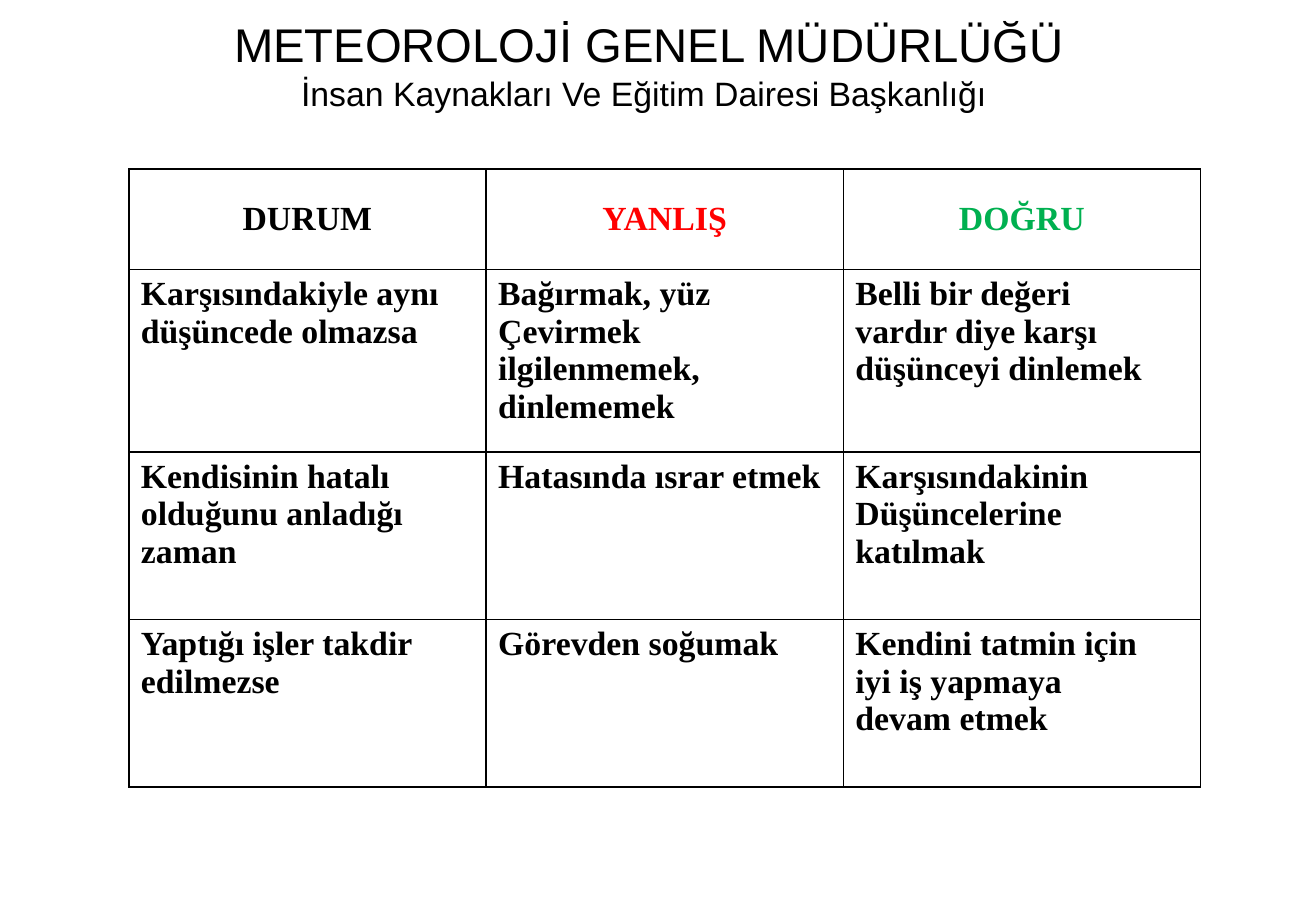
"""Builds a slide with a heading and a table of wrong and right behaviours."""
from lxml import etree
from pptx import Presentation, util as u
from pptx.dml import color
from pptx.enum import text
from pptx.oxml import ns

HEADING = [("METEOROLOJİ GENEL MÜDÜRLÜĞÜ", 28),
           ("İnsan Kaynakları Ve Eğitim Dairesi Başkanlığı ", 20)]
HEADERS = [("DURUM", "000000"), ("YANLIŞ", "FF0000"), ("DOĞRU", "00B050")]
SITUATIONS = [
    (["Karşısındakiyle aynı", "düşüncede olmazsa"],
     ["Bağırmak, yüz", "Çevirmek", "ilgilenmemek,", "dinlememek"],
     ["Belli bir değeri", "vardır diye karşı", "düşünceyi dinlemek"]),
    (["Kendisinin hatalı", "olduğunu anladığı", "zaman"],
     ["Hatasında ısrar etmek"],
     ["Karşısındakinin", "Düşüncelerine", "katılmak"]),
    (["Yaptığı işler takdir", "edilmezse"],
     ["Görevden soğumak"],
     ["Kendini tatmin için", "iyi iş yapmaya", "devam etmek"]),
]
ROW_HEIGHTS = [0.83, 1.5, 1.38, 1.38]
COLUMN_WIDTH = 2.94
HANGING = u.Inches(0.38)


def set_font(font, hex_color, **values):
    font.color.rgb = color.RGBColor.from_string(hex_color)
    for key, value in values.items():
        setattr(font, key, value)


def add_borders(cell):
    properties = cell._tc.get_or_add_tcPr()
    for position, side in enumerate(("lnL", "lnR", "lnT", "lnB")):
        border = etree.Element(ns.qn("a:" + side), w=str(u.Pt(1)))
        fill = etree.SubElement(border, ns.qn("a:solidFill"))
        etree.SubElement(fill, ns.qn("a:srgbClr"), val="000000")
        properties.insert(position, border)


def fill_cell(cell, lines, hex_color, align, anchor):
    cell.fill.background()
    cell.vertical_anchor = anchor
    add_borders(cell)
    cell.text_frame.text = "\n".join(lines)
    for paragraph in cell.text_frame.paragraphs:
        paragraph.alignment = align
        indents = paragraph._p.get_or_add_pPr()
        indents.set("marL", str(HANGING))
        indents.set("indent", str(-HANGING))
        for run in paragraph.runs:
            set_font(run.font, hex_color, name="Times New Roman", size=u.Pt(20), bold=True)


def add_behaviours(slide):
    table = slide.shapes.add_table(
        len(ROW_HEIGHTS), len(HEADERS), u.Inches(1.06), u.Inches(1.39),
        u.Inches(COLUMN_WIDTH * len(HEADERS)), u.Inches(sum(ROW_HEIGHTS))).table
    table.horz_banding = False
    table.first_row = False
    for column in table.columns:
        column.width = u.Inches(COLUMN_WIDTH)
    for row, height in zip(table.rows, ROW_HEIGHTS):
        row.height = u.Inches(height)
    for c, (header, hex_color) in enumerate(HEADERS):
        fill_cell(table.cell(0, c), [header], hex_color,
                  text.PP_ALIGN.CENTER, text.MSO_ANCHOR.MIDDLE)
    for r, situation in enumerate(SITUATIONS, 1):
        for c, lines in enumerate(situation):
            fill_cell(table.cell(r, c), lines, "000000",
                      text.PP_ALIGN.LEFT, text.MSO_ANCHOR.TOP)


def add_heading(slide):
    box = slide.shapes.add_textbox(*map(u.Inches, (1.16, 0.08, 8.36, 0.91)))
    box.text_frame.word_wrap = True
    paragraph = box.text_frame.paragraphs[0]
    paragraph.alignment = text.PP_ALIGN.CENTER
    for i, (line, size) in enumerate(HEADING):
        if i:
            paragraph.add_line_break()
        run = paragraph.add_run()
        run.text = line
        set_font(run.font, "000000", name="Arial", size=u.Pt(size))


def main():
    deck = Presentation()
    deck.slide_width, deck.slide_height = u.Inches(10.83), u.Inches(7.5)
    slide = deck.slides.add_slide(deck.slide_layouts[6])
    add_behaviours(slide)
    add_heading(slide)
    deck.save("out.pptx")


if __name__ == "__main__":
    main()
